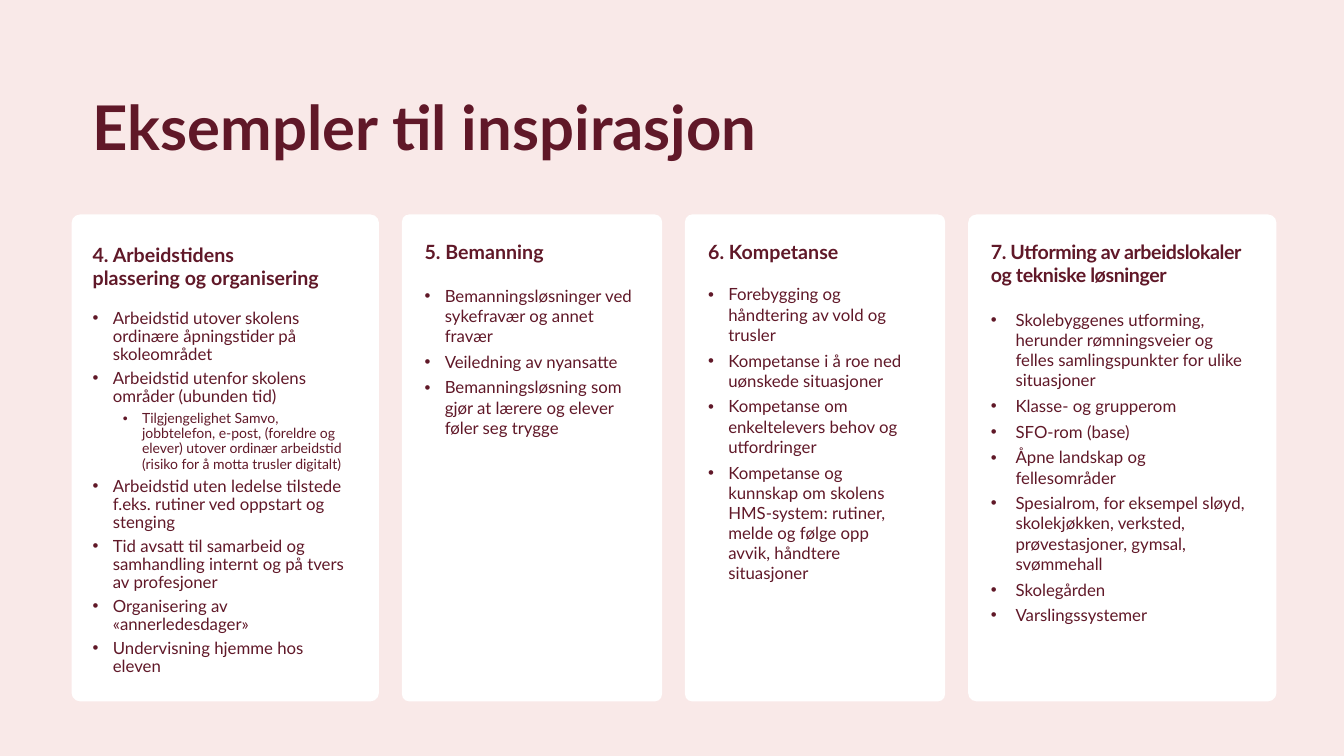
from dataclasses import dataclass

import lxml.etree
import pptx
import pptx.dml.color
import pptx.enum.shapes
import pptx.enum.text
import pptx.oxml.ns
import pptx.util

Pt = pptx.util.Pt
BACKGROUND = "F9E9E8"
CARD_FILL = "FFFFFF"
TEXT_COLOUR = "601828"
FONT_NAME = "Lato"
CARD_LEFT = 51.1
CARD_TOP = 153.2
CARD_HEIGHT = 347.8
CARD_GAP = 16.4


@dataclass
class Item:
    text: str
    level: int = 0


@dataclass
class Card:
    width: float
    text_left: float
    heading: str
    heading_top: float
    heading_width: float
    heading_height: float
    list_top: float
    list_width: float
    list_height: float
    items: list[Item]
    indent: float = 14.4
    line_spacing: float = 1.0
    tracking: float = 0


CARDS = [
    Card(219.6, 66.2, "4. Arbeidstidens\vplassering og organisering",
         169.9, 191.5, 41, 217.6, 194.4, 272.2, [
             Item("Arbeidstid utover skolens ordinære åpningstider på skoleområdet"),
             Item("Arbeidstid utenfor skolens områder (ubunden tid)"),
             Item("Tilgjengelighet Samvo, jobbtelefon, e-post, (foreldre og elever) "
                  "utover ordinær arbeidstid (risiko for å motta trusler digitalt)", 1),
             Item("Arbeidstid uten ledelse tilstede f.eks. rutiner ved oppstart og stenging"),
             Item("Tid avsatt til samarbeid og samhandling internt og på tvers av profesjoner"),
             Item("Organisering av «annerledesdager»"),
             Item("Undervisning hjemme hos eleven"),
         ], line_spacing=0.9),
    Card(185.8, 303.3, "5. Bemanning", 167.8, 116, 24.5, 200.2, 156.2, 289.4, [
        Item("Bemanningsløsninger ved sykefravær og annet fravær"),
        Item("Veiledning av nyansatte"),
        Item("Bemanningsløsning som gjør at lærere og elever føler seg trygge"),
    ]),
    Card(185.8, 505.8, "6. Kompetanse", 167.8, 126, 24.5, 199.4, 154.1, 289.4, [
        Item("Forebygging og håndtering av vold og trusler"),
        Item("Kompetanse i å roe ned uønskede situasjoner"),
        Item("Kompetanse om enkeltelevers behov og utfordringer"),
        Item("Kompetanse og kunnskap om skolens HMS-system: rutiner, melde og "
             "følge opp avvik, håndtere situasjoner"),
    ]),
    Card(220.3, 707.8, "7. Utforming av arbeidslokaler og tekniske løsninger",
         167.8, 193.7, 41, 217.4, 191.8, 240.5, [
             Item("Skolebyggenes utforming, herunder rømningsveier og felles "
                  "samlingspunkter for ulike situasjoner"),
             Item("Klasse- og grupperom"),
             Item("SFO-rom (base)"),
             Item("Åpne landskap og fellesområder"),
             Item("Spesialrom, for eksempel sløyd, skolekjøkken, verksted, "
                  "prøvestasjoner, gymsal, svømmehall"),
             Item("Skolegården"),
             Item("Varslingssystemer"),
         ], indent=17.6, tracking=-0.3),
]


def set_fill(fill, colour: str) -> None:
    fill.solid()
    fill.fore_color.rgb = pptx.dml.color.RGBColor.from_string(colour)


def place(box, left: float, top: float, width: float, height: float) -> None:
    box.left, box.top, box.width, box.height = map(Pt, (left, top, width, height))


def prepare_frame(box, anchor=pptx.enum.text.MSO_ANCHOR.TOP):
    frame = box.text_frame
    frame.word_wrap = True
    frame.auto_size = pptx.enum.text.MSO_AUTO_SIZE.NONE
    frame.vertical_anchor = anchor
    frame.margin_left = Pt(0)
    frame.margin_right = Pt(7.2)
    frame.margin_top = frame.margin_bottom = Pt(3.6)
    return frame


def style(para, size: float, bold: bool = False, line_spacing: float = 1.0) -> None:
    para.alignment = pptx.enum.text.PP_ALIGN.LEFT
    para.line_spacing = line_spacing
    para.font.name = FONT_NAME
    para.font.size = Pt(size)
    para.font.bold = bold
    set_fill(para.font.fill, TEXT_COLOUR)


def add_bullet(para, left: float, hanging: float) -> None:
    properties = para._p.get_or_add_pPr()
    properties.set("marL", str(Pt(left)))
    properties.set("indent", str(-Pt(hanging)))
    for tag, name, value in (("a:buFont", "typeface", "Arial"), ("a:buChar", "char", "•")):
        lxml.etree.SubElement(properties, pptx.oxml.ns.qn(tag)).set(name, value)


def fill_list(box, card: Card) -> None:
    place(box, card.text_left, card.list_top, card.list_width, card.list_height)
    frame = prepare_frame(box)
    for number, item in enumerate(card.items):
        para = frame.add_paragraph() if number else frame.paragraphs[0]
        para.text = item.text
        para.level = item.level
        add_bullet(para, 35.3 if item.level else card.indent,
                   13.7 if item.level else card.indent)
        para.space_before = Pt(4)
        style(para, 10 if item.level else 12, line_spacing=card.line_spacing)


def add_heading(page, card: Card) -> None:
    box = page.shapes.add_textbox(Pt(card.text_left), Pt(card.heading_top),
                                  Pt(card.heading_width), Pt(card.heading_height))
    para = prepare_frame(box).paragraphs[0]
    para.text = card.heading
    style(para, 14, bold=True)
    if card.tracking:
        defaults = para._p.pPr.find(pptx.oxml.ns.qn("a:defRPr"))
        defaults.set("spc", str(round(card.tracking * 100)))


def add_panel(page, left: float, width: float) -> None:
    panel = page.shapes.add_shape(pptx.enum.shapes.MSO_SHAPE.ROUNDED_RECTANGLE,
                                  Pt(left), Pt(CARD_TOP), Pt(width), Pt(CARD_HEIGHT))
    panel.adjustments[0] = 0.028
    panel.shadow.inherit = False
    set_fill(panel.fill, CARD_FILL)
    panel.line.fill.background()
    page.shapes.title.element.addprevious(panel.element)


def main() -> None:
    deck = pptx.Presentation()
    deck.slide_width, deck.slide_height = Pt(960), Pt(540)
    page = deck.slides.add_slide(deck.slide_layouts.get_by_name("Comparison"))
    set_fill(page.background.fill, BACKGROUND)

    title = page.shapes.title
    place(title, 66.2, 38.9, 828, 81.4)
    para = prepare_frame(title, pptx.enum.text.MSO_ANCHOR.BOTTOM).paragraphs[0]
    para.text = "Eksempler til inspirasjon"
    style(para, 44, bold=True, line_spacing=0.9)

    left = CARD_LEFT
    for number, card in enumerate(CARDS, start=1):
        add_panel(page, left, card.width)
        add_heading(page, card)
        fill_list(page.placeholders[number], card)
        left += card.width + CARD_GAP

    for box in list(page.placeholders):
        if not box.text_frame.text:
            box.element.getparent().remove(box.element)
    deck.save("out.pptx")


if __name__ == "__main__":
    main()
